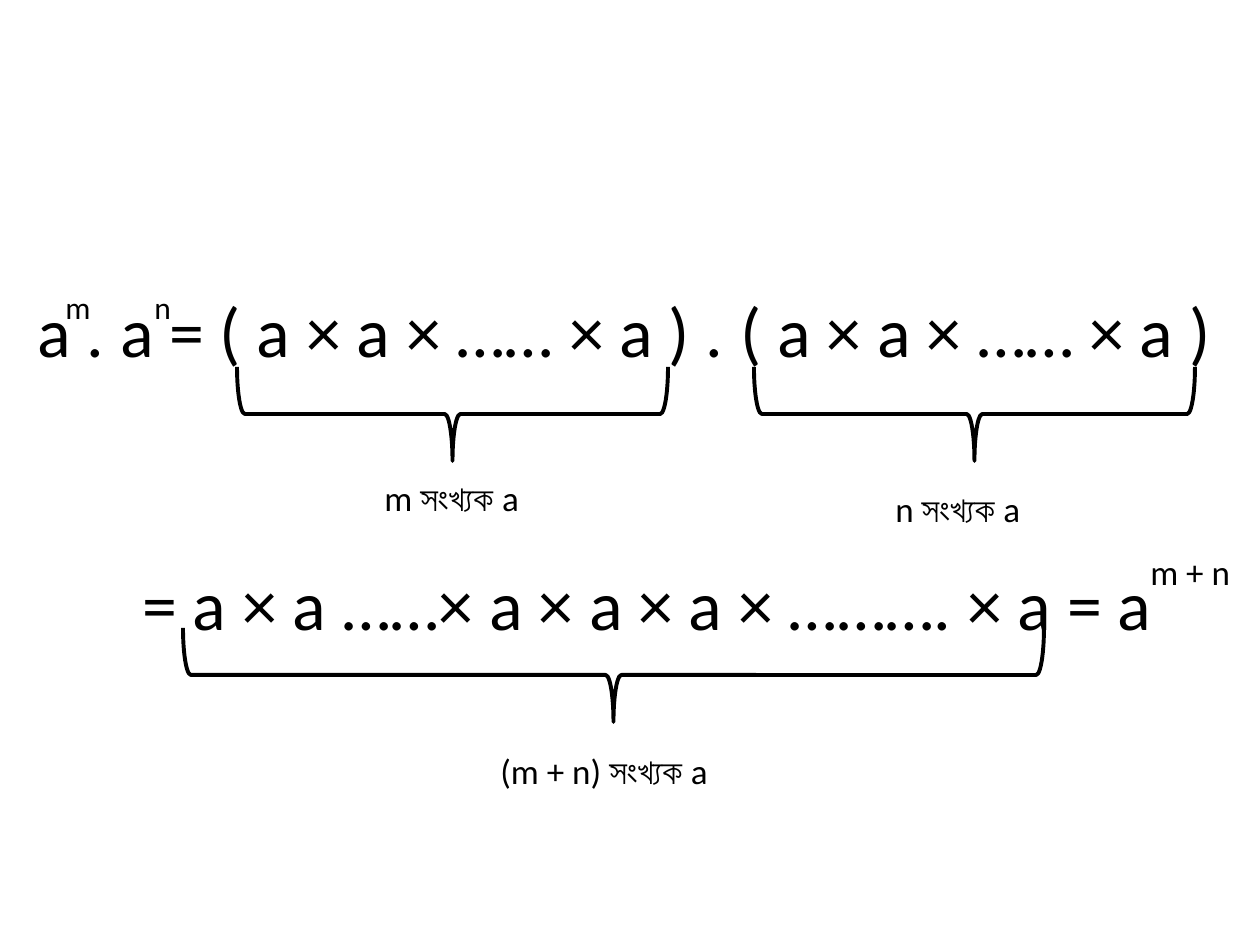
from dataclasses import dataclass

from pptx import Presentation
from pptx.dml.color import RGBColor
from pptx.enum.shapes import MSO_SHAPE
from pptx.util import Emu, Pt

BRACE = MSO_SHAPE.RIGHT_BRACE
PX = 914400 // 126


@dataclass(frozen=True)
class Theme:
    font: str = "Calibri"
    ink: RGBColor = RGBColor(0, 0, 0)
    formula: int = 40
    label: int = 20
    exponent: int = 18
    line: float = 2.25


THEME = Theme()


def px(n):
    return Emu(round(n * PX))


def add_text(s, text, x, y, w, h, size=THEME.label, color=THEME.ink, wrap=False):
    tf = s.shapes.add_textbox(px(x), px(y), px(w), px(h)).text_frame
    tf.word_wrap = wrap
    r = tf.paragraphs[0].add_run()
    r.text = text
    r.font.name = THEME.font
    r.font.size = Pt(size)
    r.font.color.rgb = color


def add_brace(s, x, y, w, h=94):
    left, top = x + (w - h) / 2, y + (h - w) / 2
    sp = s.shapes.add_shape(BRACE, px(left), px(top), px(h), px(w))
    sp.rotation = 90
    sp.shadow.inherit = False
    sp.fill.background()
    sp.line.color.rgb = THEME.ink
    sp.line.width = Pt(THEME.line)


def product_row(s, x, y):
    add_text(s, "a . a = ( a × a × …… × a ) .", x, y, 914, 97, size=THEME.formula)
    add_text(s, "( a × a × …… × a )", x + 703, y, 546, 97, size=THEME.formula)
    for name, dx in (("m", 28), ("n", 117)):
        add_text(s, name, x + dx, y + 1, 45, 53, size=THEME.exponent)
    for dx, w in ((212, 431), (729, 441)):
        add_brace(s, x + dx, y + 86, w)
    add_text(s, "m সংখ্যক a", x + 347, y + 189, 242, 55)
    add_text(s, "n সংখ্যক a", x + 858, y + 200, 242, 55)


def sum_row(s, x, y):
    add_text(s, "= a × a ……× a × a × a × ………. × a = a", x, y, 1050, 97,
             size=THEME.formula)
    add_text(s, "m + n", x + 1008, y - 10, 105, 55)
    add_brace(s, x + 53, y + 74, 861)
    add_text(s, "(m + n) সংখ্যক a", x + 358, y + 189, 252, 55)


def main():
    prs = Presentation()
    prs.slide_width, prs.slide_height = px(1260), px(945)
    s = prs.slides.add_slide(prs.slide_layouts[6])
    product_row(s, 25, 281)
    sum_row(s, 130, 554)
    prs.save("out.pptx")


if __name__ == "__main__":
    main()
